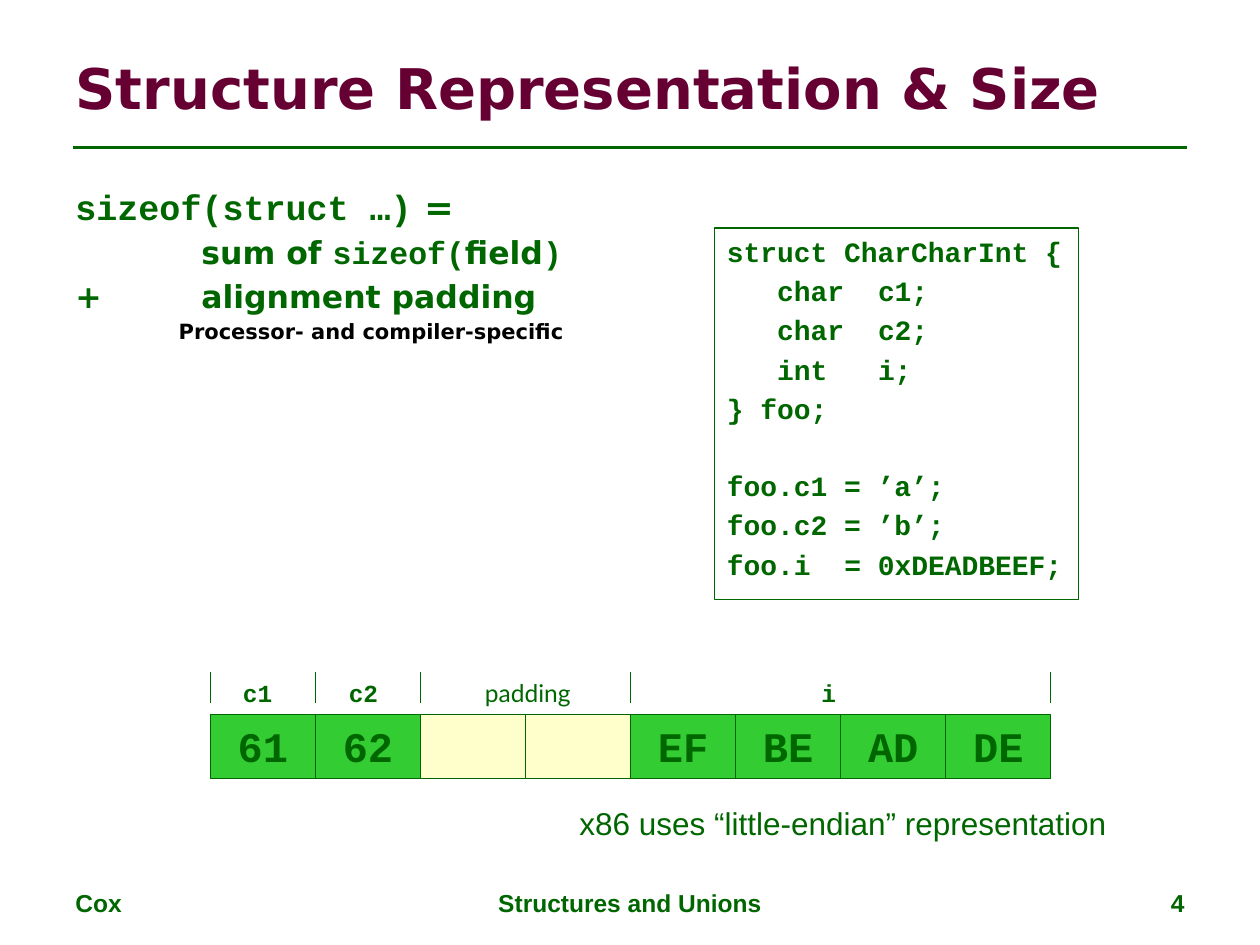
from lxml.etree import SubElement
from pptx import Presentation
from pptx.dml.color import RGBColor
from pptx.enum.shapes import MSO_CONNECTOR, MSO_SHAPE
from pptx.enum.text import MSO_ANCHOR, PP_ALIGN
from pptx.oxml.ns import qn
from pptx.util import Inches, Pt

HUES = {"green": "006600", "wine": "660033", "lime": "33CC33",
        "cream": "FFFFCC", "black": "000000"}
SANS, MONO, ARIAL, LATO = "DejaVu Sans", "Courier New", "Arial", "Lato"
LEFT, MID, RIGHT = PP_ALIGN.LEFT, PP_ALIGN.CENTER, PP_ALIGN.RIGHT


def hue(name):
    return RGBColor.from_string(HUES[name])


def write(par, text, font=SANS, size=18, color="green", bold=True,
          align=LEFT, before=0):
    """Add one run to a paragraph and format both."""
    par.alignment = align
    par.space_before = Pt(before)
    run = par.add_run()
    run.text = text
    run.font.name = font
    run.font.size = Pt(size)
    run.font.bold = bold
    run.font.color.rgb = hue(color)


def set_tabs(par, stops):
    """Set left tab stops, given in inches."""
    tabs = SubElement(par._p.get_or_add_pPr(), qn("a:tabLst"))
    for stop in stops:
        SubElement(tabs, qn("a:tab"), pos=str(Inches(stop)), algn="l")


def add_text(slide, x, y, w, h, wrap=True):
    box = slide.shapes.add_textbox(Inches(x), Inches(y), Inches(w), Inches(h))
    box.text_frame.word_wrap = wrap
    return box.text_frame


def add_rect(slide, x, y, w, h, fill=None):
    rect = slide.shapes.add_shape(MSO_SHAPE.RECTANGLE, Inches(x), Inches(y),
                                  Inches(w), Inches(h))
    rect.shadow.inherit = False
    if fill:
        rect.fill.solid()
        rect.fill.fore_color.rgb = hue(fill)
    else:
        rect.fill.background()
    rect.line.color.rgb = hue("green")
    rect.line.width = Pt(0.75)
    frame = rect.text_frame
    frame.word_wrap = True
    frame.vertical_anchor = MSO_ANCHOR.TOP
    return frame


def add_line(slide, x1, y1, x2, y2, width=0.75):
    line = slide.shapes.add_connector(MSO_CONNECTOR.STRAIGHT, Inches(x1),
                                      Inches(y1), Inches(x2), Inches(y2))
    line.line.color.rgb = hue("green")
    line.line.width = Pt(width)
    SubElement(line._element.spPr, qn("a:effectLst"))


def add_head(slide, x, y, w, h):
    title = slide.shapes.title
    title.left, title.top = Inches(x), Inches(y)
    title.width, title.height = Inches(w), Inches(h)
    title.text_frame.vertical_anchor = MSO_ANCHOR.MIDDLE
    write(title.text_frame.paragraphs[0], "Structure Representation & Size",
          size=32, color="wine")
    add_line(slide, x + 0.08, y + 0.87, x + w - 0.08, y + 0.87, 1.5)


def add_rule(slide, x, y, w, h):
    """Formula for the size of a struct."""
    frame = add_text(slide, x, y, w, h)
    lines = [
        [("sizeof(struct …)", MONO, 20), (" =", SANS, 20)],
        [("\tsum of ", SANS, 18), ("sizeof(", MONO, 18),
         ("field", SANS, 18), (")", MONO, 18)],
        [("+\talignment padding", SANS, 18)],
    ]
    for n, runs in enumerate(lines):
        par = frame.add_paragraph() if n else frame.paragraphs[0]
        for text, font, size in runs:
            write(par, text, font=font, size=size, before=3.4)
        set_tabs(par, [1])
    note = frame.add_paragraph()
    write(note, "Processor- and compiler-specific", size=12, color="black",
          before=2.4)
    props = note._p.get_or_add_pPr()
    props.set("marL", str(Inches(0.82)))
    props.set("indent", "0")


def add_code(slide, x, y, w, h):
    """Code listing; tab stops are counted in characters."""
    frame = add_rect(slide, x, y, w, h)
    char, gap, skip = 0.6 * 16 / 72, 3.3, 24.8
    lines = [
        ("struct CharCharInt {", [], gap),
        ("\tchar\tc1;", [3, 9], gap),
        ("\tchar\tc2;", [3, 9], gap),
        ("\tint\ti;", [3, 9], gap),
        ("} foo;", [], gap),
        ("foo.c1 = ’a’;", [], skip),
        ("foo.c2 = ’b’;", [], gap),
        ("foo.i\t= 0xDEADBEEF;", [7], gap),
    ]
    for n, (text, stops, before) in enumerate(lines):
        par = frame.add_paragraph() if n else frame.paragraphs[0]
        write(par, text, font=MONO, size=16, before=before)
        if stops:
            set_tabs(par, [stop * char for stop in stops])


def add_bytes(slide, x, y, w, h):
    """Memory layout: field marks and names above a row of bytes."""
    cells = ["61", "62", "", "", "EF", "BE", "AD", "DE"]
    step, top, tall = w / len(cells), y + 0.34, h - 0.34
    for n, text in enumerate(cells):
        frame = add_rect(slide, x + n * step, top, step, tall,
                         "lime" if text else "cream")
        frame.margin_bottom = 0
        if text:
            write(frame.paragraphs[0], text, font=MONO, size=24, align=MID,
                  before=5)
    for edge in (0, 1, 2, 4, 8):
        add_line(slide, x + edge * step, y, x + edge * step, y + 0.25)
    # Name, offset from the row start, width, font
    names = [("c1", 0.16, 0.5, MONO), ("c2", 1, 0.5, MONO),
             ("padding", 2.08, 0.95, LATO), ("i", 4.75, 0.4, MONO)]
    for text, left, wide, font in names:
        frame = add_text(slide, x + left, y, wide, 0.33)
        write(frame.paragraphs[0], text, font=font, size=14,
              bold=font == MONO)


def add_note(slide, x, y, w, h):
    frame = add_text(slide, x, y, w, h, wrap=False)
    write(frame.paragraphs[0], "x86 uses “little-endian” representation",
          font=ARIAL, bold=False)


def add_foot(slide, x, y, w, h):
    side, mid = 2.33, 3.17
    parts = [("Cox", x, side, LEFT),
             ("Structures and Unions", x + (w - mid) / 2, mid, MID),
             ("4", x + w - side, side, RIGHT)]
    for text, left, wide, align in parts:
        frame = add_text(slide, left, y, wide, h)
        write(frame.paragraphs[0], text, font=ARIAL, size=14, align=align)


def main():
    deck = Presentation()
    deck.slide_width, deck.slide_height = Inches(10), Inches(7.5)
    slide = deck.slides.add_slide(deck.slide_layouts[5])
    add_head(slide, 0.5, 0.3, 9, 0.78)
    add_rule(slide, 0.5, 1.42, 4.41, 1.48)
    add_code(slide, 5.67, 1.81, 2.89, 2.95)
    add_bytes(slide, 1.67, 5.33, 6.67, 0.85)
    add_note(slide, 4.5, 6.33, 4.38, 0.4)
    add_foot(slide, 0.5, 7, 9, 0.35)
    deck.save("out.pptx")


if __name__ == "__main__":
    main()
